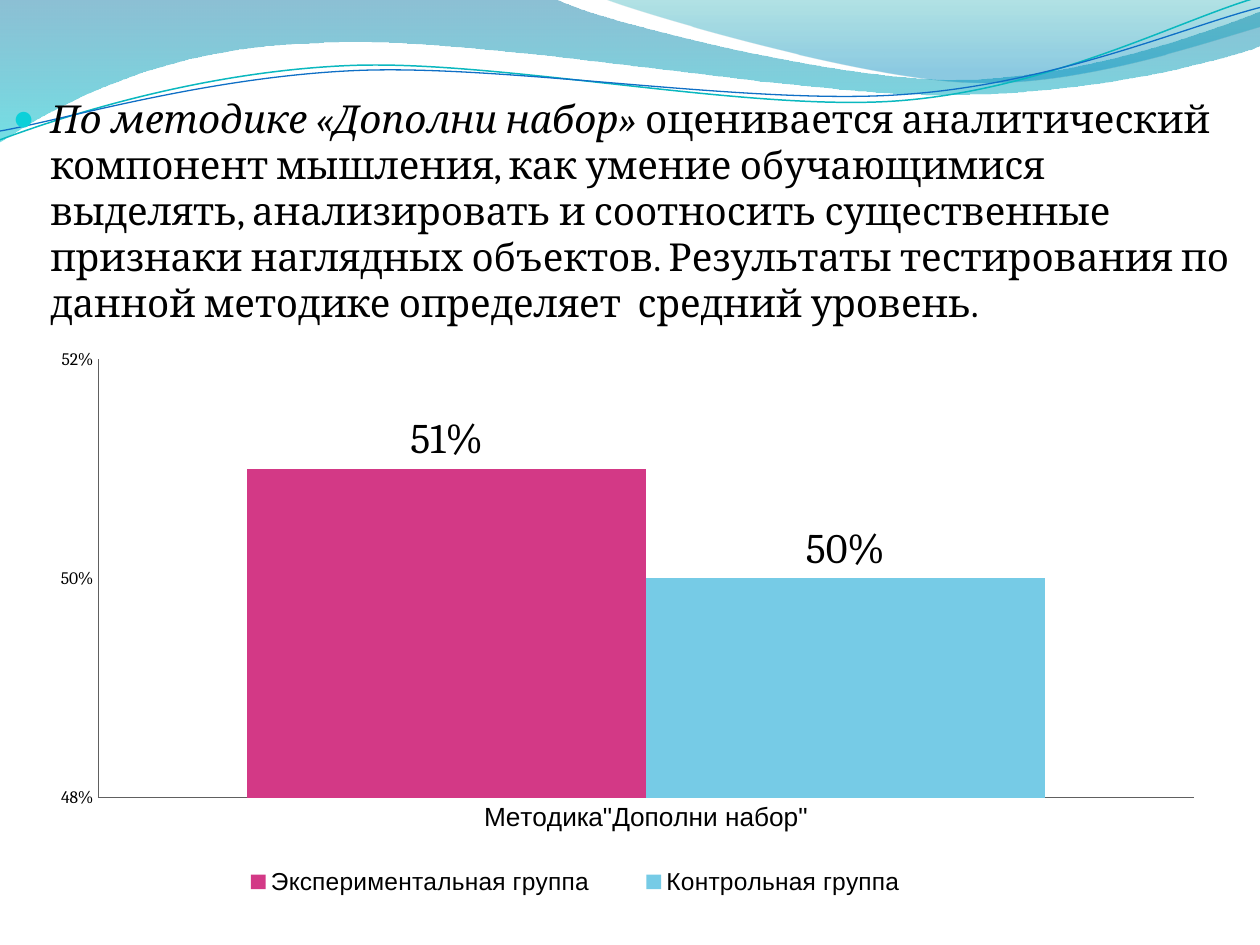
"""Build the slide on the «Дополни набор» method: wave header, text and column chart."""
import math

import lxml.etree
import pptx
import pptx.chart.data
import pptx.dml.color
import pptx.enum.chart
import pptx.enum.text
import pptx.oxml
import pptx.oxml.ns
import pptx.util

Cm, Pt = pptx.util.Cm, pptx.util.Pt
RGBColor = pptx.dml.color.RGBColor
qn = pptx.oxml.ns.qn
BLACK = RGBColor(0, 0, 0)
GREY = RGBColor(0x60, 0x60, 0x60)
DEEP_BLUE = RGBColor(0x00, 0x74, 0xA1)
TURQUOISE = RGBColor(0x00, 0xC6, 0xCF)
TEAL = RGBColor(0x00, 0xA1, 0xA9)
SKY_BLUE = RGBColor(0x00, 0x8B, 0xBF)
LINE_TEAL = RGBColor(0x0A, 0xB8, 0xBF)
LINE_BLUE = RGBColor(0x0F, 0x6F, 0xC6)
PINK = RGBColor(0xD3, 0x39, 0x86)
LIGHT_BLUE = RGBColor(0x76, 0xCB, 0xE6)
INCH = 2.54
TILT = 2.7

deck = pptx.Presentation()
deck.slide_width, deck.slide_height = Cm(25.4), Cm(19.05)
page = deck.slides.add_slide(deck.slide_layouts[1])
title = page.shapes.title
title._element.getparent().remove(title._element)
body = page.placeholders[1]


def draw_wave(segments, closed):
    """Draw segments of one point (line) or three points (Bezier curve), in inches."""
    points = [(Cm(x * INCH), Cm(y * INCH)) for segment in segments for x, y in segment]
    builder = page.shapes.build_freeform(*points[0])
    builder.add_line_segments(points[1:], close=closed)
    shape = builder.convert_to_shape()
    shape.shadow.inherit = False
    outline = next(shape._element.iter(qn("a:path")))
    lines = iter(outline.findall(qn("a:lnTo")))
    for segment in segments[1:]:
        steps = [next(lines) for _ in segment]
        if len(steps) == 3:
            curve = lxml.etree.Element(qn("a:cubicBezTo"))
            steps[0].addprevious(curve)
            for step in steps:
                curve.append(step[0])
                outline.remove(step)
    return shape


bands = [
    ([[(0, 0)], [(4.4, -0.01)],
      [(4.76, 0.17), (6.64, 0.63), (7.58, 0.63)], [(8.53, 0.63), (9.58, 0.26), (10, 0.09)],
      [(10.01, 0.36)],
      [(9.83, 0.44), (8.7, 0.76), (7.46, 0.75)], [(6.22, 0.75), (3.82, 0.28), (2.57, 0.34)],
      [(1.29, 0.36), (0.46, 0.83), (-0.01, 1.13)]],
     [(0, DEEP_BLUE, 45), (1, TURQUOISE, 55)]),
    ([[(4.79, -0.01)],
      [(5.09, 0.11), (6.82, 0.62), (7.69, 0.65)], [(8.56, 0.69), (9.61, 0.32), (10, 0.21)],
      [(10, 0)]],
     [(0, TEAL, 30), (0.8, SKY_BLUE, 45)]),
]
for segments, stops in bands:
    band = draw_wave(segments, True)
    band.line.fill.background()
    band.fill.gradient()
    band.fill.gradient_angle = 270
    for stop, (position, color, _) in zip(band.fill.gradient_stops, stops):
        stop.position = position
        stop.color.rgb = color
    gradient = band._element.spPr.find(qn("a:gradFill"))
    for color_node, (_, _, opacity) in zip(gradient.iter(qn("a:srgbClr")), stops):
        lxml.etree.SubElement(color_node, qn("a:alpha")).set("val", str(opacity * 1000))

strands = [
    ([[(0, 1.11)], [(0.48, 0.93), (1.58, 0.57), (2.77, 0.52)],
      [(3.95, 0.47), (5.93, 0.89), (7.13, 0.8)], [(8.33, 0.71), (9.38, 0.15), (9.98, -0.02)]],
     LINE_TEAL, 0.85, (4.99, 0.575)),
    ([[(0, 1.04)], [(0.47, 0.96), (1.64, 0.61), (2.83, 0.56)],
      [(4.03, 0.51), (5.97, 0.84), (7.17, 0.75)], [(8.36, 0.67), (9.41, 0.21), (10, 0.06)]],
     LINE_BLUE, 0.75, (5, 0.59)),
]
cosine, sine = math.cos(math.radians(TILT)), math.sin(math.radians(TILT))
for segments, color, width, (mid_x, mid_y) in strands:
    level = [[(mid_x + (x - mid_x) * cosine - (y - mid_y) * sine,
               mid_y + (x - mid_x) * sine + (y - mid_y) * cosine) for x, y in segment]
             for segment in segments]
    strand = draw_wave(level, False)
    strand.rotation = 360 - TILT
    strand.fill.background()
    strand.line.color.rgb = color
    strand.line.width = Pt(width)

page.shapes._spTree.append(body._element)
body.left, body.top, body.width, body.height = Cm(0), Cm(1.78), Cm(25.4), Cm(17.27)
body.text_frame.auto_size = pptx.enum.text.MSO_AUTO_SIZE.NONE
para = body.text_frame.paragraphs[0]
para.font.name, para.font.size = "Cambria", Pt(22)
para.font.color.rgb = BLACK
para.line_spacing = 1.0
para.space_before = Pt(4.4)
for text, italic in [
    ("По методике «Дополни набор»", True),
    (" оценивается аналитический компонент мышления, как умение обучающимися  выделять, "
     "анализировать и соотносить существенные признаки наглядных объектов. "
     "Результаты тестирования по данной методике определяет  средний уровень.", False),
]:
    span = para.add_run()
    span.text = text
    span.font.italic = italic
    span.font.name, span.font.size = "Cambria", Pt(22)
    span.font.color.rgb = BLACK
properties = para._p.get_or_add_pPr()
properties.set("marL", str(Cm(0.76)))
properties.set("indent", str(-Cm(0.76)))
bullet = pptx.oxml.parse_xml(
    '<a:pPr xmlns:a="http://schemas.openxmlformats.org/drawingml/2006/main">'
    '<a:buClr><a:srgbClr val="0BD0D9"/></a:buClr><a:buSzPct val="95000"/>'
    '<a:buFont typeface="Arial"/><a:buChar char="●"/></a:pPr>')
position = properties.index(properties.find(qn("a:spcBef"))) + 1
properties[position:position] = list(bullet)

chart_data = pptx.chart.data.CategoryChartData(number_format="0%")
chart_data.categories = ['Методика"Дополни набор"']
chart_data.add_series("Экспериментальная группа", [0.51])
chart_data.add_series("Контрольная группа", [0.5])
chart = page.shapes.add_chart(
    pptx.enum.chart.XL_CHART_TYPE.COLUMN_CLUSTERED,
    Cm(0), Cm(6.95), Cm(25), Cm(12.1), chart_data).chart
chart.has_title = False
chart.font.name, chart.font.size = "Cambria", Pt(10)
chart.font.color.rgb = BLACK

plot = chart.plots[0]
plot.gap_width, plot.overlap, plot.vary_by_categories = 75, 0, False
for series, color in zip(plot.series, (PINK, LIGHT_BLUE)):
    series.format.fill.solid()
    series.format.fill.fore_color.rgb = color
    labels = series.data_labels
    labels.show_value = True
    labels.number_format, labels.number_format_is_linked = "0%", False
    labels.position = pptx.enum.chart.XL_LABEL_POSITION.OUTSIDE_END
    labels.font.name, labels.font.size = "Cambria", Pt(24)
    labels.font.color.rgb = BLACK

for axis in (chart.category_axis, chart.value_axis):
    axis.has_major_gridlines = False
    axis.major_tick_mark = pptx.enum.chart.XL_TICK_MARK.NONE
    axis.format.line.color.rgb = GREY
    axis.format.line.width = Pt(0.5)
category_font = chart.category_axis.tick_labels.font
category_font.name, category_font.size = "Arial", Pt(15)
scale = chart.value_axis
scale.minimum_scale, scale.maximum_scale, scale.major_unit = 0.48, 0.52, 0.02
scale.tick_labels.number_format = "0%"
scale.tick_labels.number_format_is_linked = False

chart.has_legend = True
legend = chart.legend
legend.position = pptx.enum.chart.XL_LEGEND_POSITION.BOTTOM
legend.include_in_layout = False
legend.font.name, legend.font.size = "Arial", Pt(14)


def place(parent, index, target, bounds):
    """Give a chart part a fixed place, as fractions of the chart."""
    for old in parent.findall(qn("c:layout")):
        parent.remove(old)
    layout = lxml.etree.Element(qn("c:layout"))
    manual = lxml.etree.SubElement(layout, qn("c:manualLayout"))
    settings = [("layoutTarget", target)] if target else []
    settings += [("xMode", "edge"), ("yMode", "edge"), *zip("xywh", bounds)]
    for name, value in settings:
        lxml.etree.SubElement(manual, qn(f"c:{name}")).set("val", str(value))
    parent.insert(index, layout)


place(chart._chartSpace.chart.plotArea, 0, "inner", (0.079, 0.024, 0.884, 0.731))
place(legend._element, 1, None, (0.163, 0.84, 0.602, 0.11))

deck.save("out.pptx")
